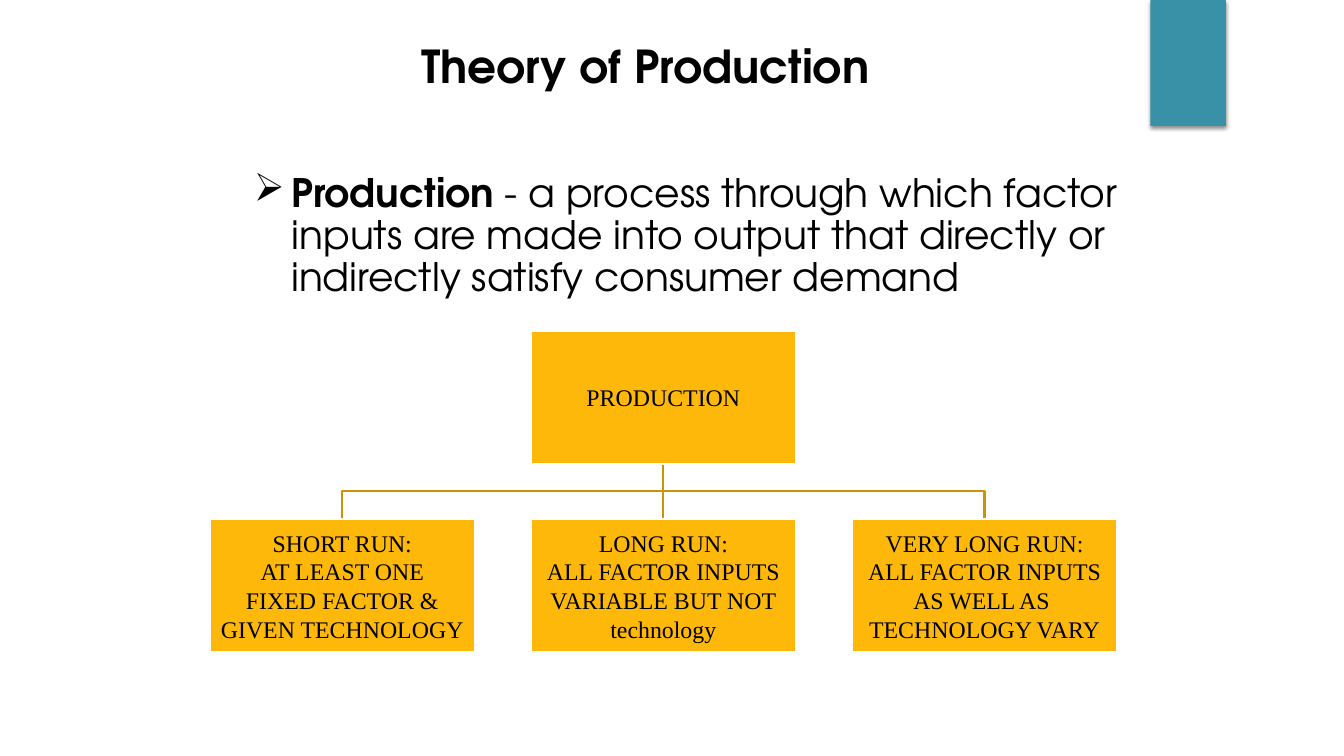
from lxml import etree
from pptx import Presentation
from pptx.dml.color import RGBColor
from pptx.enum.shapes import MSO_CONNECTOR, MSO_SHAPE
from pptx.enum.text import MSO_ANCHOR, PP_ALIGN
from pptx.oxml import parse_xml
from pptx.oxml.ns import qn
from pptx.util import Inches, Pt

RECT = MSO_SHAPE.RECTANGLE
LINE = MSO_CONNECTOR.STRAIGHT
MIDDLE = MSO_ANCHOR.MIDDLE
CENTER = PP_ALIGN.CENTER

TITLE = "Theory of Production"
TERM = "Production"
MEANING = (" - a process through which factor inputs are made into output "
           "that directly or indirectly satisfy consumer demand")
ROOT = ["PRODUCTION"]
RUNS = [
    ["SHORT RUN:", "AT LEAST ONE", "FIXED FACTOR &", "GIVEN TECHNOLOGY"],
    ["LONG RUN:", "ALL FACTOR INPUTS", "VARIABLE BUT NOT", "technology"],
    ["VERY LONG RUN:", "ALL FACTOR INPUTS", "AS WELL AS ", "TECHNOLOGY VARY"],
]
SANS, SERIF = "TeX Gyre Adventor", "Times New Roman"
BLACK, WHITE, TEAL, GOLD, BROWN = "000000", "FFFFFF", "3891A7", "FEB80A", "CB9308"

BOX_W, BOX_H = 2.63, 1.32
LEFT, STEP = 2.08, 3.185
ROOT_Y, RUN_Y = 3.28, 5.15
ROOT_END = ROOT_Y + BOX_H
BAR_Y = (ROOT_END + RUN_Y) / 2

SHADOW = """<a:effectLst xmlns:a="http://schemas.openxmlformats.org/drawingml/2006/main">
<a:outerShdw blurRad="38100" dist="25400" dir="5400000" rotWithShape="0">
<a:srgbClr val="000000"><a:alpha val="45000"/></a:srgbClr></a:outerShdw></a:effectLst>"""

deck = Presentation()
deck.slide_width, deck.slide_height = Inches(13.33), Inches(7.5)
slide = deck.slides.add_slide(deck.slide_layouts[6])
shapes = slide.shapes


def color(code):
    return RGBColor.from_string(code)


def style(font, face, size, bold=False):
    font.name, font.size, font.bold = face, Pt(size), bold
    font.color.rgb = color(BLACK)


def block(x, y, w, h, fill):
    shape = shapes.add_shape(RECT, Inches(x), Inches(y), Inches(w), Inches(h))
    shape.shadow.inherit = False
    shape.fill.solid()
    shape.fill.fore_color.rgb = color(fill)
    shape.line.fill.background()
    return shape


def text_box(x, y, w, h):
    frame = shapes.add_textbox(Inches(x), Inches(y), Inches(w), Inches(h)).text_frame
    frame.word_wrap = True
    return frame


def stroke(line, code):
    line.color.rgb = color(code)
    line.width = Pt(1.5)


def node(x, y, rows):
    shape = block(x, y, BOX_W, BOX_H, GOLD)
    stroke(shape.line, WHITE)
    frame = shape.text_frame
    frame.word_wrap = True
    frame.vertical_anchor = MIDDLE
    frame.margin_left = frame.margin_right = Inches(0.01)
    frame.margin_top = frame.margin_bottom = Inches(0.01)
    frame.text = "\n".join(rows)
    for para in frame.paragraphs:
        para.alignment = CENTER
        style(para.runs[0].font, SERIF, 17)


def elbow(start, end):
    points = [(start, BAR_Y), (end, BAR_Y), (end, RUN_Y)]
    form = shapes.build_freeform(Inches(start), Inches(ROOT_END))
    form.add_line_segments([(Inches(x), Inches(y)) for x, y in points], close=False)
    shape = form.convert_to_shape()
    shape.shadow.inherit = False
    shape.fill.background()
    stroke(shape.line, BROWN)


def stem(x):
    link = shapes.add_connector(LINE, Inches(x), Inches(ROOT_END), Inches(x), Inches(RUN_Y))
    etree.SubElement(link._element.spPr, qn("a:effectLst"))
    stroke(link.line, BROWN)


tab = block(11.41, 0, 0.75, 1.25, TEAL)
props = tab._element.spPr
props.replace(props.find(qn("a:effectLst")), parse_xml(SHADOW))

head = text_box(4.08, 0.33, 5.12, 0.58)
head.text = TITLE
style(head.paragraphs[0].runs[0].font, SANS, 32.4, True)

para = text_box(2.42, 1.67, 9.25, 5.25).paragraphs[0]
para.line_spacing = 0.9
form = para._p.get_or_add_pPr()
form.set("marL", str(Inches(0.37)))
form.set("indent", str(-Inches(0.37)))
tint = etree.SubElement(form, qn("a:buClr"))
etree.SubElement(tint, qn("a:srgbClr")).set("val", BLACK)
etree.SubElement(form, qn("a:buChar")).set("char", "➢")
for words, bold in [(TERM, True), (MEANING, False)]:
    run = para.add_run()
    run.text = words
    style(run.font, SANS, 28, bold)

lefts = [LEFT + i * STEP for i in range(len(RUNS))]
first, mid, last = [x + BOX_W / 2 for x in lefts]
elbow(mid, last)
stem(mid)
elbow(mid, first)
node(lefts[1], ROOT_Y, ROOT)
for x, rows in zip(lefts, RUNS):
    node(x, RUN_Y, rows)

deck.save("out.pptx")
